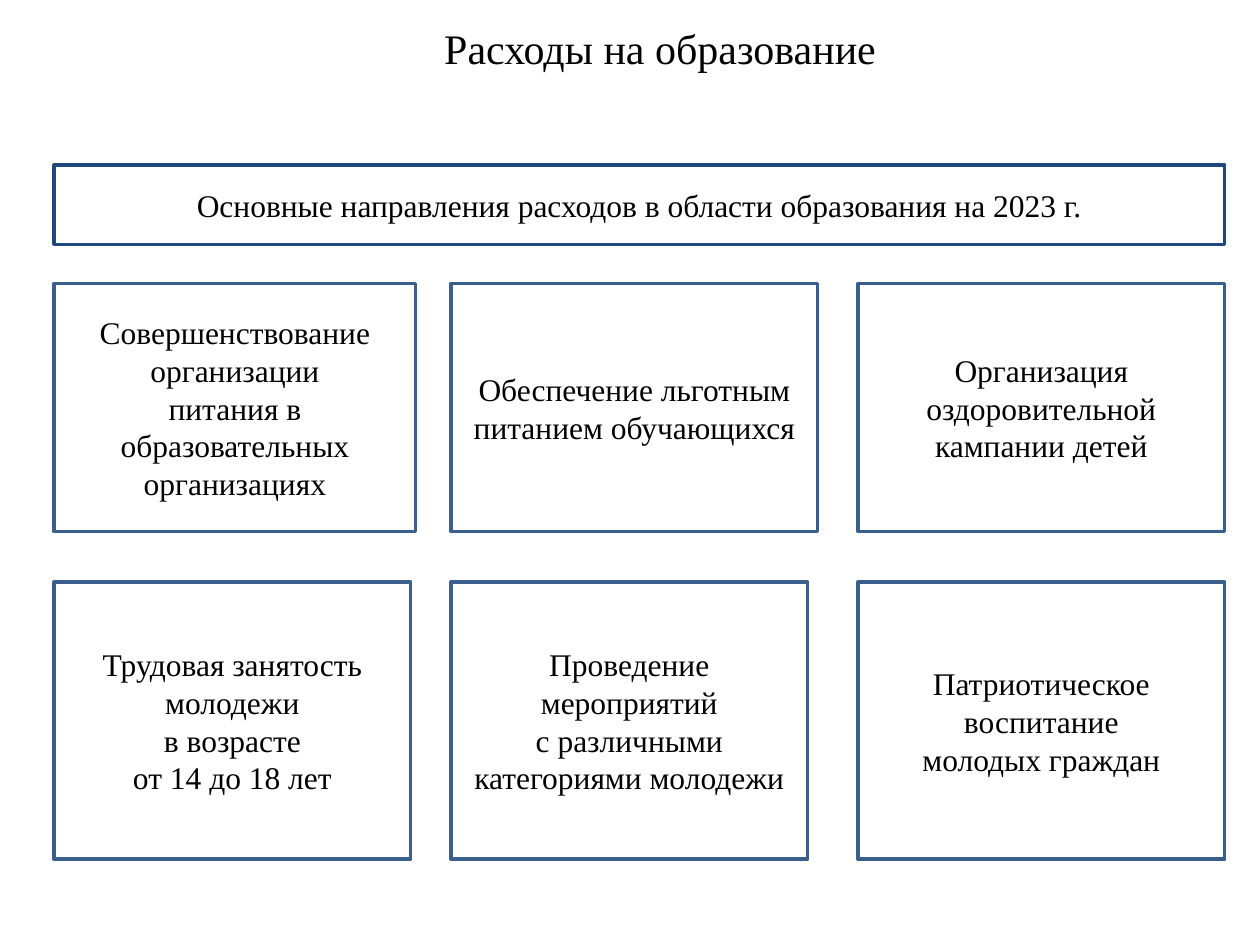
import pptx
import pptx.util
import pptx.dml.color
import pptx.enum.shapes
import pptx.enum.text

TITLE = "Расходы на образование"
HEADING = "Основные направления расходов в области образования на 2023 г."
DIRECTIONS = [
    [
        ["Совершенствование организации", "питания в образовательных", "организациях"],
        ["Обеспечение льготным", "питанием обучающихся"],
        ["Организация", "оздоровительной кампании детей"],
    ],
    [
        ["Трудовая занятость молодежи", "в возрасте", "от 14 до 18 лет"],
        ["Проведение мероприятий", "с различными", "категориями молодежи"],
        ["Патриотическое воспитание", "молодых граждан"],
    ],
]

COLUMN_LEFTS = [0.43, 3.58, 6.81]
ROWS = [
    {"top": 2.25, "height": 1.97, "widths": [2.87, 2.91, 2.91]},
    {"top": 4.62, "height": 2.2, "widths": [2.83, 2.83, 2.91]},
]
HEADING_PLACE = (COLUMN_LEFTS[0], 1.31, 9.29, 0.63)
TITLE_PLACE = (2.01, 0.13, 6.46, 0.5)


def color(hex_text):
    return pptx.dml.color.RGBColor.from_string(hex_text)


def write(shape, lines, size, anchor):
    frame = shape.text_frame
    frame.word_wrap = True
    frame.vertical_anchor = anchor
    font_format = {"name": "Times New Roman", "size": pptx.util.Pt(size)}
    for index, line in enumerate(lines):
        para = frame.paragraphs[0] if index == 0 else frame.add_paragraph()
        para.alignment = pptx.enum.text.PP_ALIGN.CENTER
        span = para.add_run()
        span.text = line
        for name, value in font_format.items():
            setattr(span.font, name, value)
        span.font.color.rgb = color("000000")


def add_box(page, place, lines, line_color):
    box = page.shapes.add_shape(
        pptx.enum.shapes.MSO_SHAPE.RECTANGLE, *map(pptx.util.Inches, place)
    )
    box.shadow.inherit = False
    box.fill.background()
    box.line.color.rgb = color(line_color)
    box.line.width = pptx.util.Pt(2)
    write(box, lines, 18, pptx.enum.text.MSO_ANCHOR.MIDDLE)


def main():
    deck = pptx.Presentation()
    deck.slide_width = pptx.util.Inches(10)
    deck.slide_height = pptx.util.Inches(7.5)
    page = deck.slides.add_slide(deck.slide_layouts[6])

    add_box(page, HEADING_PLACE, [HEADING], "1F497D")
    title = page.shapes.add_textbox(*map(pptx.util.Inches, TITLE_PLACE))
    write(title, [TITLE], 24, pptx.enum.text.MSO_ANCHOR.TOP)

    for row, directions in zip(ROWS, DIRECTIONS):
        for left, width, lines in zip(COLUMN_LEFTS, row["widths"], directions):
            add_box(page, (left, row["top"], width, row["height"]), lines, "3A5F8C")

    deck.save("out.pptx")


if __name__ == "__main__":
    main()
